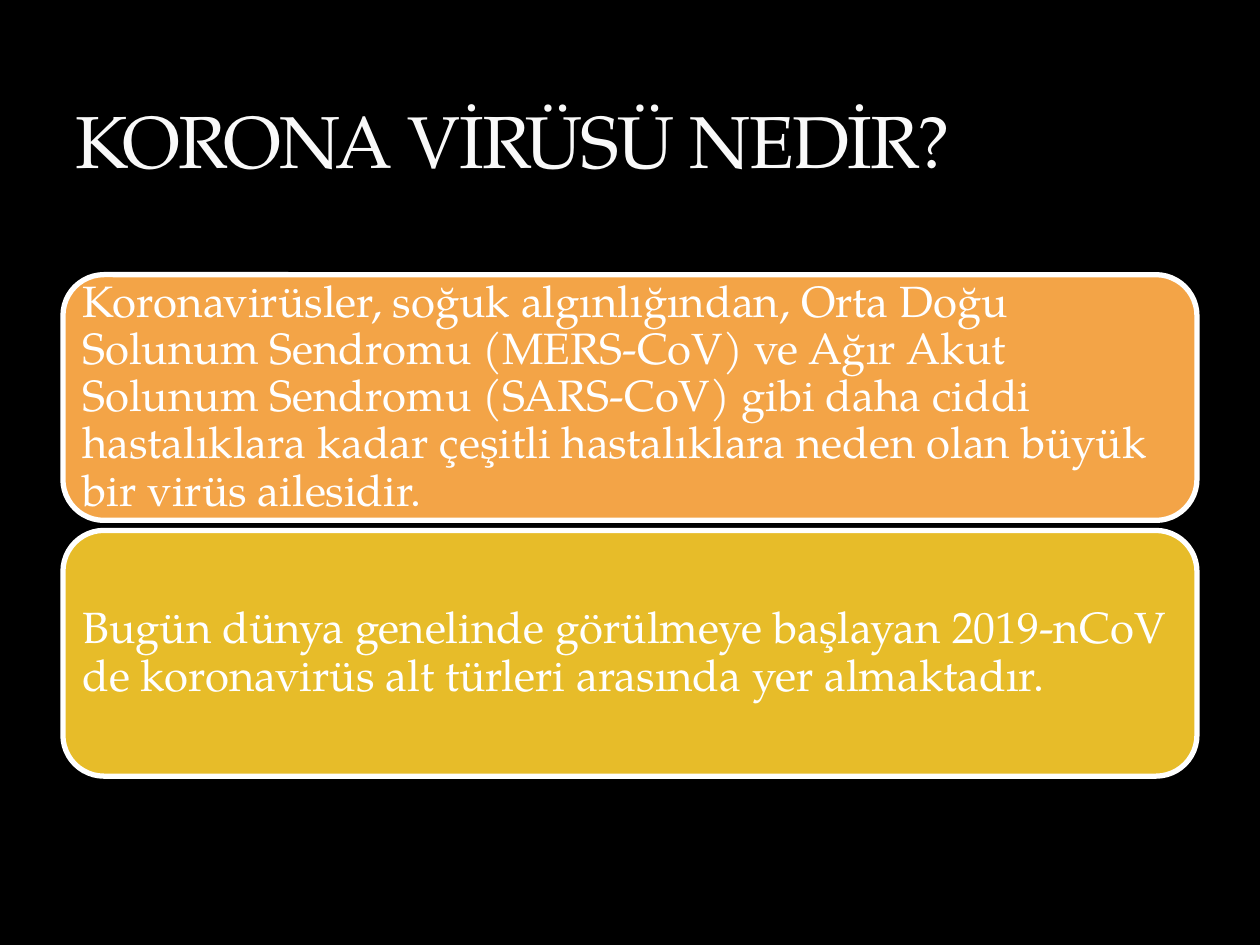
import pptx
import pptx.util
import pptx.dml.color
import pptx.enum.shapes
import pptx.enum.text

Inches = pptx.util.Inches
Pt = pptx.util.Pt
Anchor = pptx.enum.text.MSO_ANCHOR

FONT = "TeX Gyre Pagella"
COLORS = {
    "back": "000000",
    "title": "F9F9F9",
    "white": "FFFFFF",
    "orange": "F3A447",
    "gold": "E7BC29",
}
TITLE = "KORONA VİRÜSÜ NEDİR?"
CARDS = [
    ("orange", "Koronavirüsler, soğuk algınlığından, Orta Doğu Solunum Sendromu "
               "(MERS-CoV) ve Ağır Akut Solunum Sendromu (SARS-CoV) gibi daha ciddi "
               "hastalıklara kadar çeşitli hastalıklara neden olan büyük bir virüs "
               "ailesidir."),
    ("gold", "Bugün dünya genelinde görülmeye başlayan 2019-nCoV de koronavirüs "
             "alt türleri arasında yer almaktadır."),
]
LEFT, WIDTH = 0.5, 9
TOP, HEIGHT, GAP = 2.18, 1.95, 0.08


def color(name):
    return pptx.dml.color.RGBColor.from_string(COLORS[name])


def write(shape, text, size, tone, anchor):
    frame = shape.text_frame
    frame.word_wrap = True
    frame.vertical_anchor = anchor
    para = frame.paragraphs[0]
    para.alignment = pptx.enum.text.PP_ALIGN.LEFT
    run = para.add_run()
    run.text = text
    run.font.name = FONT
    run.font.size = Pt(size)
    run.font.color.rgb = color(tone)
    return para, run


def add_title(slide):
    box = slide.shapes.add_textbox(
        Inches(LEFT), Inches(0.17), Inches(WIDTH), Inches(1.33))
    para, run = write(box, TITLE, 42, "title", Anchor.BOTTOM)
    run.font._element.set("spc", "-100")  # tighter letters, by one point


def add_card(slide, top, fill, text):
    card = slide.shapes.add_shape(
        pptx.enum.shapes.MSO_SHAPE.ROUNDED_RECTANGLE,
        Inches(LEFT), Inches(top), Inches(WIDTH), Inches(HEIGHT))
    card.shadow.inherit = False
    card.fill.solid()
    card.fill.fore_color.rgb = color(fill)
    card.line.color.rgb = color("white")
    card.line.width = Pt(3)
    # The round corners inset the text; the left margin clears the border.
    frame = card.text_frame
    frame.margin_left = Inches(0.06)
    frame.margin_right = frame.margin_top = frame.margin_bottom = 0
    para, run = write(card, text, 25, "white", Anchor.MIDDLE)
    para.line_spacing = 0.9


def main():
    deck = pptx.Presentation()
    deck.slide_width, deck.slide_height = Inches(10), Inches(7.5)
    slide = deck.slides.add_slide(deck.slide_layouts[6])
    slide.background.fill.solid()
    slide.background.fill.fore_color.rgb = color("back")
    add_title(slide)
    for row, (fill, text) in enumerate(CARDS):
        add_card(slide, TOP + row * (HEIGHT + GAP), fill, text)
    deck.save("out.pptx")


if __name__ == "__main__":
    main()
